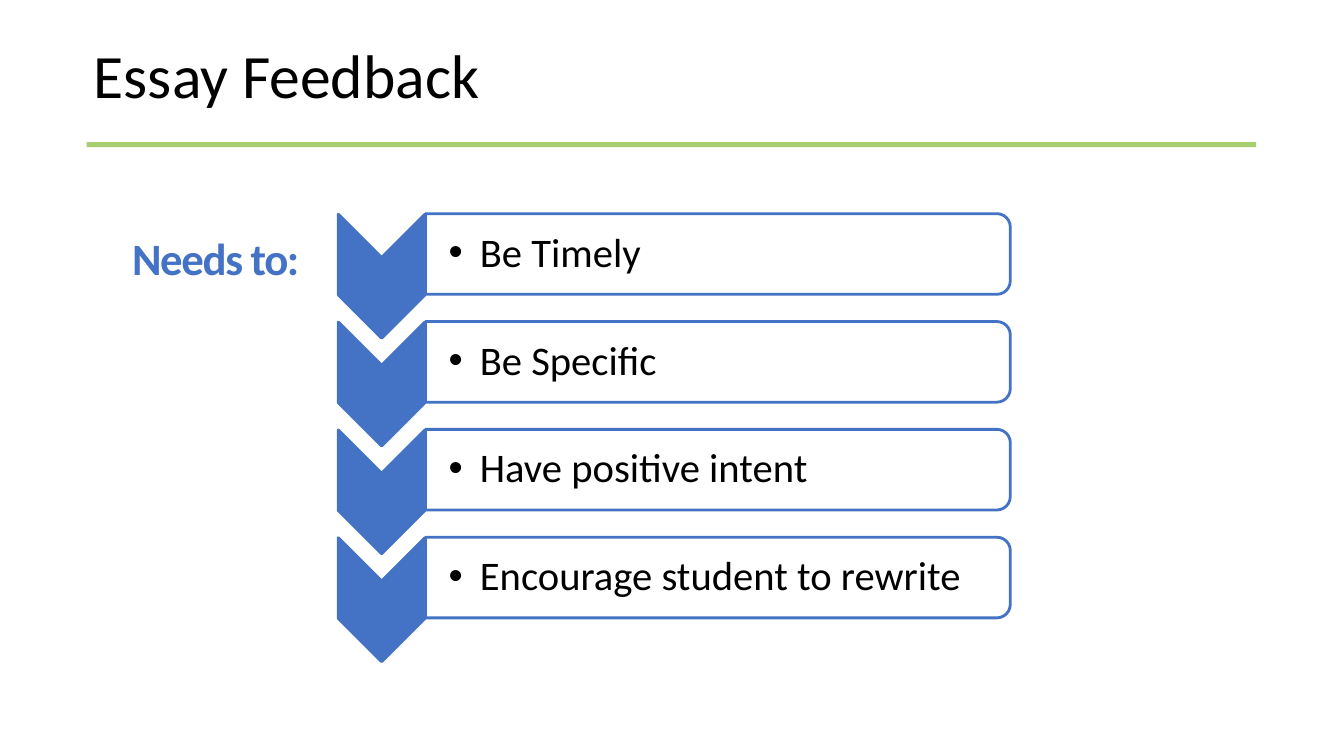
"""Builds the Essay Feedback slide: a title, a rule and four chevron rows."""
from pptx import Presentation
from pptx.dml.color import RGBColor as Rgb
from pptx.enum.shapes import MSO_SHAPE as Preset
from pptx.enum.text import MSO_ANCHOR as Anchor, PP_ALIGN as Align
from pptx.oxml.ns import qn
from pptx.util import Inches, Pt
from lxml.etree import SubElement

THEME = {
    "font": "Calibri",
    "ink": Rgb.from_string("000000"),
    "blue": Rgb.from_string("4472C4"),
    "green": Rgb.from_string("A7CE6F"),
    "white": Rgb.from_string("FFFFFF"),
    "title": Pt(44),
    "label": Pt(32),
    "item": Pt(29),
    "outline": Pt(2),
}
ITEMS = ["Be Timely", "Be Specific", "Have positive intent", "Encourage student to rewrite"]
FIRST_ROW, ROW_PITCH = 2.52, 1.07
CHEVRON_CENTER, CHEVRON_DROP = 3.785, 0.22
CHEVRON_LENGTH, CHEVRON_WIDTH = 1.23, 0.86
BAR_LEFT, BAR_LENGTH, BAR_HEIGHT = 4.22, 5.8, 0.8
TEXT_WIDTH, TEXT_HEIGHT = 5.77, 0.72


def write(box, text, size, color, anchor, insets, bold=False):
    frame = box.text_frame
    frame_format = {
        "word_wrap": True,
        "vertical_anchor": anchor,
        "margin_left": Inches(insets[0]),
        "margin_top": Inches(insets[1]),
        "margin_right": Inches(insets[1]),
        "margin_bottom": Inches(insets[1]),
    }
    for name, value in frame_format.items():
        setattr(frame, name, value)
    para = frame.paragraphs[0]
    para.alignment, para.line_spacing = Align.LEFT, 0.9
    span = para.add_run()
    span.text = text
    span.font.color.rgb = color
    for name, value in {"name": THEME["font"], "size": size, "bold": bold}.items():
        setattr(span.font, name, value)
    return para


def draw_turned(preset, center_x, center_y, length, width, fill):
    shape = page.shapes.add_shape(
        preset, Inches(center_x - length / 2), Inches(center_y - width / 2),
        Inches(length), Inches(width))
    shape.rotation = 90
    shape.shadow.inherit = False
    shape.fill.solid()
    shape.fill.fore_color.rgb = fill
    shape.line.color.rgb = THEME["blue"]
    shape.line.width = THEME["outline"]
    return shape


deck = Presentation()
deck.slide_width, deck.slide_height = Inches(13.33), Inches(7.5)
page = deck.slides.add_slide(deck.slide_layouts.get_by_name("Title Only"))

rule = page.shapes.add_shape(
    Preset.RECTANGLE, Inches(0.86), Inches(1.41), Inches(11.6), Inches(0.05))
rule.shadow.inherit = False
rule.fill.solid()
rule.fill.fore_color.rgb = THEME["green"]
rule.line.fill.background()

title = page.shapes.title
title_place = {"left": 0.88, "top": 0.24, "width": 8.92, "height": 1.08}
for name, value in title_place.items():
    setattr(title, name, Inches(value))
write(title, "Essay Feedback", THEME["title"], THEME["ink"], Anchor.MIDDLE, (0.05, 0.05))

label = page.shapes.add_textbox(Inches(1.26), Inches(2.3), Inches(11.84), Inches(3.68))
label_para = write(label, "Needs to:", THEME["label"], THEME["blue"], Anchor.TOP,
                   (0.05, 0.05), bold=True)
label_para.runs[0]._r.get_or_add_rPr().set("spc", "-100")

for row, item in enumerate(ITEMS):
    middle = FIRST_ROW + row * ROW_PITCH
    draw_turned(Preset.CHEVRON, CHEVRON_CENTER, middle + CHEVRON_DROP,
                CHEVRON_LENGTH, CHEVRON_WIDTH, THEME["blue"])
    bar = draw_turned(Preset.ROUND_2_SAME_RECTANGLE, BAR_LEFT + BAR_LENGTH / 2, middle,
                      BAR_HEIGHT, BAR_LENGTH, THEME["white"])
    bar_color = bar._element.spPr.find(qn("a:solidFill"))[0]
    SubElement(bar_color, qn("a:alpha"), val="90000")

    box = page.shapes.add_textbox(
        Inches(BAR_LEFT), Inches(middle - TEXT_HEIGHT / 2),
        Inches(TEXT_WIDTH), Inches(TEXT_HEIGHT))
    para = write(box, item, THEME["item"], THEME["ink"], Anchor.MIDDLE, (0.23, 0.02))
    bullet_format = para._p.get_or_add_pPr()
    bullet_format.set("marL", str(Inches(0.31)))
    bullet_format.set("indent", str(-Inches(0.31)))
    SubElement(bullet_format, qn("a:buFont"), typeface="Arial")
    SubElement(bullet_format, qn("a:buChar"), char="•")

deck.save("out.pptx")
